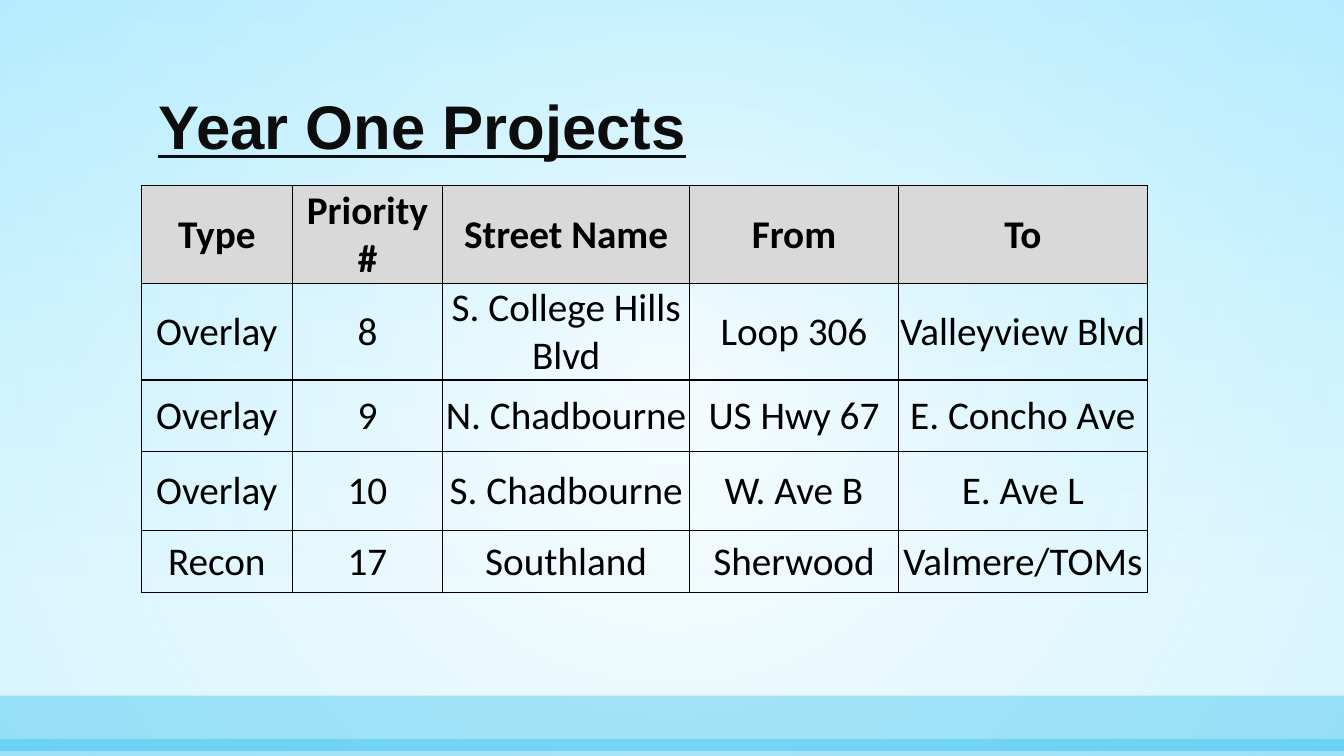
from lxml import etree
from pptx import Presentation
from pptx.dml.color import RGBColor
from pptx.enum.shapes import MSO_SHAPE
from pptx.enum.text import MSO_ANCHOR, MSO_AUTO_SIZE, PP_ALIGN
from pptx.oxml import parse_xml
from pptx.oxml.ns import qn
from pptx.util import Inches, Pt

RECTANGLE = MSO_SHAPE.RECTANGLE
MIDDLE, BOTTOM = MSO_ANCHOR.MIDDLE, MSO_ANCHOR.BOTTOM
NO_FIT = MSO_AUTO_SIZE.NONE
LEFT, CENTER = PP_ALIGN.LEFT, PP_ALIGN.CENTER

WHITE = RGBColor(0xFF, 0xFF, 0xFF)
BLACK = RGBColor(0x00, 0x00, 0x00)
INK = RGBColor(0x0D, 0x0D, 0x0D)
HEADER_GRAY = RGBColor(0xD9, 0xD9, 0xD9)
SKY = RGBColor(0xC8, 0xF1, 0xFF)
GLOW_BLUE = RGBColor(0x91, 0xE4, 0xFF)
BAND_BLUE = RGBColor(0x00, 0xB0, 0xEA)
DRAWING = "http://schemas.openxmlformats.org/drawingml/2006/main"

WIDTH, HEIGHT = 13.33, 7.5
COLUMNS = [1.5, 1.49, 2.45, 2.07, 2.47]
ROWS = [0.97, 0.96, 0.71, 0.78, 0.62]
PROJECTS = [
    ["Type", "Priority #", "Street Name", "From", "To"],
    ["Overlay", "8", "S. College Hills Blvd", "Loop 306", "Valleyview Blvd"],
    ["Overlay", "9", "N. Chadbourne", "US Hwy 67", "E. Concho Ave"],
    ["Overlay", "10", "S. Chadbourne", "W. Ave B", "E. Ave L"],
    ["Recon", "17", "Southland", "Sherwood", "Valmere/TOMs"],
]


def add_backdrop(page, top, height):
    box = page.shapes.add_shape(RECTANGLE, 0, Inches(top), Inches(WIDTH), Inches(height))
    box.shadow.inherit = False
    box.line.fill.background()
    return box


def set_opacity(box, percents):
    colors = box._element.spPr.iter(qn("a:srgbClr"))
    for color, percent in zip(colors, percents):
        etree.SubElement(color, qn("a:alpha"), val=str(percent * 1000))


deck = Presentation()
deck.slide_width, deck.slide_height = Inches(WIDTH), Inches(HEIGHT)
page = deck.slides.add_slide(deck.slide_layouts[5])

sky = page.background.fill
sky.gradient()
sky.gradient_angle = 270
for stop, color, position in zip(sky.gradient_stops, [SKY, WHITE], [0, 0.79]):
    stop.color.rgb = color
    stop.position = position

glow = add_backdrop(page, 0, HEIGHT)
glow.fill.gradient()
for stop, color, position in zip(glow.fill.gradient_stops, [WHITE, GLOW_BLUE], [0, 1]):
    stop.color.rgb = color
    stop.position = position
set_opacity(glow, [49, 35])
linear = glow._element.spPr.find(".//" + qn("a:lin"))
linear.getparent().replace(linear, parse_xml(
    f'<a:path xmlns:a="{DRAWING}" path="circle">'
    '<a:fillToRect l="50000" t="50000" r="50000" b="50000"/></a:path>'))

for top, height, percent in [(6.9, 0.55, 30), (7.33, 0.17, 28)]:
    band = add_backdrop(page, top, height)
    band.fill.solid()
    band.fill.fore_color.rgb = BAND_BLUE
    set_opacity(band, [percent])

title = page.shapes.title
page.shapes._spTree.append(title._element)
title.left, title.top = Inches(1.47), Inches(0.48)
title.width, title.height = Inches(10.4), Inches(1.19)
title.text_frame.vertical_anchor = BOTTOM
title.text_frame.auto_size = NO_FIT
para = title.text_frame.paragraphs[0]
para.alignment = LEFT
para.line_spacing = 0.9
span = para.add_run()
span.text = "Year One Projects"
span.font.name, span.font.size = "Arial", Pt(44)
span.font.bold = span.font.underline = True
span.font.color.rgb = INK

table = page.shapes.add_table(
    len(ROWS), len(COLUMNS), Inches(1.4), Inches(1.84),
    Inches(sum(COLUMNS)), Inches(sum(ROWS))).table
table.horz_banding = False
for column, width in zip(table.columns, COLUMNS):
    column.width = Inches(width)
for row, height in zip(table.rows, ROWS):
    row.height = Inches(height)

for row_index, project in enumerate(PROJECTS):
    is_header = row_index == 0
    for column_index, label in enumerate(project):
        cell = table.cell(row_index, column_index)
        cell.vertical_anchor = MIDDLE
        cell.margin_left = cell.margin_right = cell.margin_top = Inches(0.01)
        cell.margin_bottom = 0
        para = cell.text_frame.paragraphs[0]
        para.alignment = CENTER
        span = para.add_run()
        span.text = label
        span.font.name, span.font.size = "Calibri", Pt(28)
        span.font.bold = is_header
        span.font.color.rgb = BLACK
        properties = cell._tc.get_or_add_tcPr()
        for side in ["lnL", "lnR", "lnT", "lnB"]:
            properties.append(parse_xml(
                f'<a:{side} xmlns:a="{DRAWING}" w="{Pt(1)}"><a:solidFill>'
                f'<a:srgbClr val="{BLACK}"/></a:solidFill></a:{side}>'))
        if is_header:
            cell.fill.solid()
            cell.fill.fore_color.rgb = HEADER_GRAY
        else:
            cell.fill.background()

deck.save("out.pptx")
